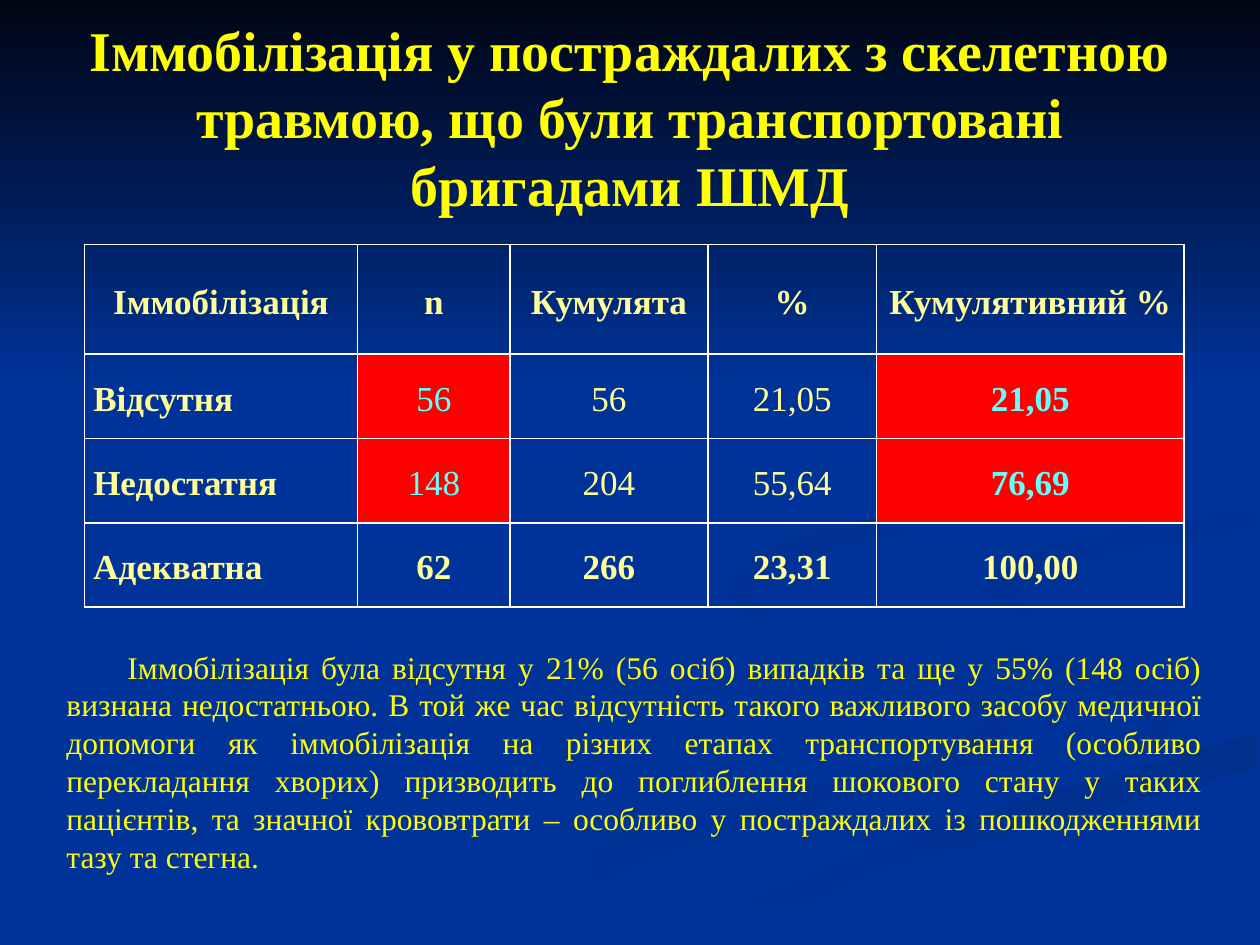
from dataclasses import dataclass

from lxml.etree import SubElement
from pptx import Presentation
from pptx.dml.color import RGBColor
from pptx.enum.shapes import MSO_SHAPE as ShapeKind
from pptx.enum.text import MSO_ANCHOR as Anchor, MSO_AUTO_SIZE as AutoSize, PP_ALIGN as Align
from pptx.oxml.ns import qn
from pptx.util import Cm, Pt

FONT = "Times New Roman"
NAVY, RED, WHITE = "003399", "FF0000", "FFFFFF"
YELLOW, CREAM, CYAN = "FFFF00", "FFFF99", "66FFFF"
GRID = Cm(0.0254)


@dataclass(frozen=True)
class Ribbon:
    start_color: str
    end_color: str
    angle: int
    points: tuple


@dataclass(frozen=True)
class Entry:
    text: str
    color: str = CREAM
    bold: bool = True
    fill: str | None = None
    align: Align = Align.CENTER


RIBBONS = (
    Ribbon(NAVY, "003193", 0, (
        (781, 553), (614, 496), (575, 459), (581, 484), (752, 543), (785, 570),
        (727, 602), (499, 661), (300, 749), (361, 749), (564, 665), (780, 605), (800, 581))),
    Ribbon(NAVY, "003193", 45, (
        (943, 570), (905, 540), (758, 498), (724, 464), (746, 500), (892, 553),
        (918, 581), (894, 605), (941, 581))),
    Ribbon("002F8C", NAVY, 90, (
        (503, 749), (571, 749), (695, 692), (998, 609), (998, 581), (764, 647), (630, 693))),
    Ribbon(NAVY, NAVY, 0, (
        (725, 464), (759, 498), (905, 540), (943, 570), (902, 603), (663, 668), (477, 749),
        (519, 747), (696, 669), (999, 581), (999, 538), (817, 492), (782, 460),
        (835, 430), (999, 402), (999, 387), (770, 427))),
    Ribbon("003091", NAVY, 45, (
        (781, 460), (791, 478), (826, 496), (805, 472), (843, 448), (998, 420),
        (998, 402), (849, 427))),
    Ribbon("002F8E", NAVY, 45, (
        (683, 430), (825, 402), (894, 344), (843, 275), (762, 233), (846, 279), (889, 335),
        (830, 382), (625, 426), (577, 462), (622, 500), (593, 470), (614, 448))),
)

COLUMN_WIDTHS = (5.51, 3.07, 3.99, 3.4, 6.2)
ROW_HEIGHTS = (2.21, 1.7, 1.7, 1.7)
HEADINGS = ("Іммобілізація", "n", "Кумулята", "%", "Кумулятивний %")


def label(text: str) -> Entry:
    return Entry(text, align=Align.LEFT)


def plain(text: str) -> Entry:
    return Entry(text, bold=False)


def alert(text: str, bold: bool) -> Entry:
    return Entry(text, CYAN, bold, RED)


ROWS = (
    tuple(Entry(heading) for heading in HEADINGS),
    (label("Відсутня"), alert("56", False), plain("56"), plain("21,05"), alert("21,05", True)),
    (label("Недостатня"), alert("148", False), plain("204"), plain("55,64"), alert("76,69", True)),
    (label("Адекватна"), Entry("62"), Entry("266"), Entry("23,31"), Entry("100,00")),
)


def rgb(value: str) -> RGBColor:
    return RGBColor.from_string(value)


def write_text(frame, text: str, *, size: float, color: str, bold: bool = False,
               align: Align = Align.CENTER, spacing: float | None = None,
               indent: float = 0) -> None:
    frame.word_wrap = True
    paragraph = frame.paragraphs[0]
    paragraph.alignment = align
    if spacing:
        paragraph.line_spacing = spacing
    if indent:
        paragraph._p.get_or_add_pPr().set("indent", str(Cm(indent)))
    run = paragraph.add_run()
    run.text = text
    run.font.name = FONT
    run.font.size = Pt(size)
    run.font.bold = bold
    run.font.color.rgb = rgb(color)


def paint(shape, start_color: str, end_color: str, angle: int) -> None:
    shape.shadow.inherit = False
    shape.line.fill.background()
    if start_color == end_color:
        shape.fill.solid()
        shape.fill.fore_color.rgb = rgb(start_color)
        return
    shape.fill.gradient()
    shape.fill.gradient_angle = (360 - angle) % 360
    for stop, color in zip(shape.fill.gradient_stops, (start_color, end_color)):
        stop.color.rgb = rgb(color)


def draw_ribbon(slide, ribbon: Ribbon) -> None:
    builder = slide.shapes.build_freeform(*ribbon.points[0], scale=GRID)
    builder.add_line_segments(ribbon.points[1:], close=True)
    paint(builder.convert_to_shape(), ribbon.start_color, ribbon.end_color, ribbon.angle)


def draw_sky(slide) -> None:
    sky = slide.shapes.add_shape(ShapeKind.RECTANGLE, 0, 0, Cm(25.4), Cm(7.82))
    paint(sky, "000514", NAVY, 90)


def add_borders(cell, color: str, width: float) -> None:
    properties = cell._tc.get_or_add_tcPr()
    for position, side in enumerate(("a:lnL", "a:lnR", "a:lnT", "a:lnB")):
        line = SubElement(properties, qn(side), w=str(Pt(width)))
        fill = SubElement(line, qn("a:solidFill"))
        SubElement(fill, qn("a:srgbClr"), val=color)
        properties.insert(position, line)


def fill_cell(cell, entry: Entry) -> None:
    cell.vertical_anchor = Anchor.MIDDLE
    cell.margin_left = cell.margin_right = Cm(0.18)
    cell.margin_top = cell.margin_bottom = 0
    if entry.fill:
        cell.fill.solid()
        cell.fill.fore_color.rgb = rgb(entry.fill)
    else:
        cell.fill.background()
    add_borders(cell, WHITE, 1)
    write_text(cell.text_frame, entry.text, size=20, color=entry.color,
               bold=entry.bold, align=entry.align, spacing=1.15)


def draw_table(slide) -> None:
    table = slide.shapes.add_table(len(ROWS), len(COLUMN_WIDTHS), Cm(1.7), Cm(4.93),
                                   Cm(sum(COLUMN_WIDTHS)), Cm(sum(ROW_HEIGHTS))).table
    for column, width in zip(table.columns, COLUMN_WIDTHS):
        column.width = Cm(width)
    for row, height, entries in zip(table.rows, ROW_HEIGHTS, ROWS):
        row.height = Cm(height)
        for cell, entry in zip(row.cells, entries):
            fill_cell(cell, entry)


def draw_title(slide) -> None:
    title = slide.shapes.title
    title.element.getparent().append(title.element)
    title.left, title.top, title.width, title.height = Cm(1.27), Cm(0.76), Cm(22.86), Cm(3.18)
    title.text_frame.auto_size = AutoSize.NONE
    title.text_frame.vertical_anchor = Anchor.MIDDLE
    write_text(title.text_frame,
               "Іммобілізація у постраждалих з скелетною травмою, "
               "що були транспортовані бригадами ШМД",
               size=32, color=YELLOW, bold=True)


def draw_summary(slide) -> None:
    summary = slide.shapes.add_textbox(Cm(1.09), Cm(12.93), Cm(23.39), Cm(4.88))
    summary.text_frame.auto_size = AutoSize.SHAPE_TO_FIT_TEXT
    write_text(summary.text_frame,
               "Іммобілізація була відсутня у 21% (56 осіб) випадків та ще у 55% (148 осіб) "
               "визнана недостатньою. В той же час відсутність такого важливого засобу медичної "
               "допомоги як іммобілізація на різних етапах транспортування (особливо "
               "перекладання хворих) призводить до поглиблення шокового стану у таких "
               "пацієнтів, та значної крововтрати – особливо у постраждалих із пошкодженнями "
               "тазу та стегна.",
               size=18, color=YELLOW, align=Align.JUSTIFY, indent=1.23)


def main() -> None:
    presentation = Presentation()
    presentation.slide_width, presentation.slide_height = Cm(25.4), Cm(19.05)
    slide = presentation.slides.add_slide(presentation.slide_layouts[5])
    slide.background.fill.solid()
    slide.background.fill.fore_color.rgb = rgb(NAVY)
    for ribbon in RIBBONS:
        draw_ribbon(slide, ribbon)
    draw_sky(slide)
    draw_title(slide)
    draw_table(slide)
    draw_summary(slide)
    presentation.save("out.pptx")


if __name__ == "__main__":
    main()
